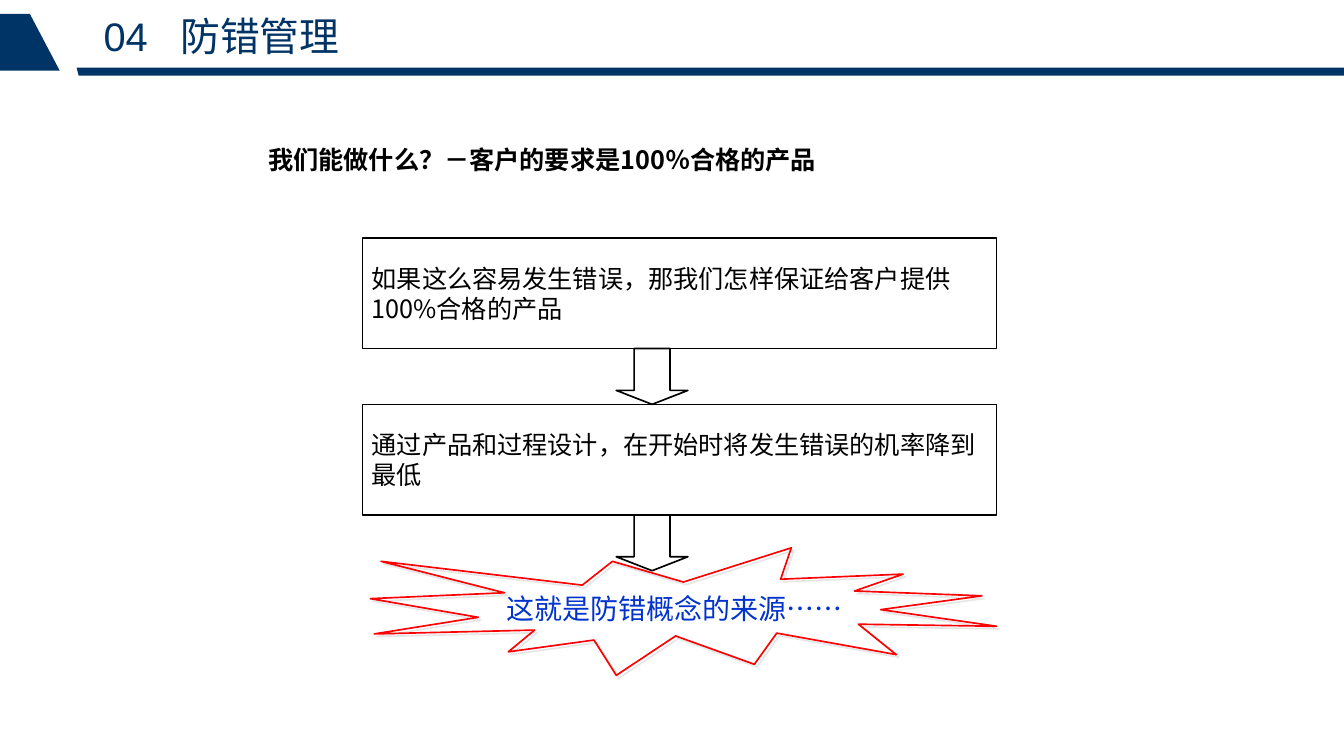
from dataclasses import dataclass

from lxml import etree
from pptx import Presentation
from pptx.dml.color import RGBColor
from pptx.enum.shapes import MSO_SHAPE
from pptx.enum.text import MSO_ANCHOR, PP_ALIGN
from pptx.oxml.ns import qn
from pptx.util import Pt

PX = 9525
RECT = MSO_SHAPE.RECTANGLE
DOWN_ARROW = MSO_SHAPE.DOWN_ARROW
BURST = MSO_SHAPE.EXPLOSION1
MIDDLE = MSO_ANCHOR.MIDDLE
TOP = MSO_ANCHOR.TOP
LEFT = PP_ALIGN.LEFT


@dataclass(frozen=True)
class Theme:
    navy: str = "003366"
    ink: str = "000000"
    red: str = "FF0000"
    blue: str = "0033CC"
    shadow: str = "E7E6E6"
    latin: str = "Arial"
    cjk: str = "Noto Sans CJK SC"
    title: float = 30
    body: float = 19
    burst: float = 21.1
    line: float = 1.25


THEME = Theme()


def emu(box):
    return [v * PX for v in box]


def write(sp, text, size, color, font=THEME.cjk, bold=False, anchor=TOP):
    tf = sp.text_frame
    tf.word_wrap = True
    tf.vertical_anchor = anchor
    tf.text = text
    p = tf.paragraphs[0]
    p.alignment = LEFT
    r = p.runs[0]
    r.font.size = Pt(size)
    r.font.bold = bold
    r.font.color.rgb = RGBColor.from_string(color)
    r.font.name = font
    ea = etree.SubElement(r.font._element, qn("a:ea"))
    ea.set("typeface", THEME.cjk)
    return tf


def add_text(slide, box, *args, **kwargs):
    return write(slide.shapes.add_textbox(*emu(box)), *args, **kwargs)


def add_outline(slide, kind, box, color):
    sp = slide.shapes.add_shape(kind, *emu(box))
    sp.shadow.inherit = False
    sp.fill.background()
    sp.line.color.rgb = RGBColor.from_string(color)
    sp.line.width = Pt(THEME.line)
    return sp


def add_polygon(slide, points):
    builder = slide.shapes.build_freeform(*points[0], scale=PX)
    builder.add_line_segments(points[1:], close=True)
    sp = builder.convert_to_shape()
    sp.shadow.inherit = False
    sp.fill.solid()
    sp.fill.fore_color.rgb = RGBColor.from_string(THEME.navy)
    sp.line.fill.background()


def add_offset_shadow(sp):
    effects = sp._element.spPr.find(qn("a:effectLst"))
    shadow = etree.SubElement(effects, qn("a:outerShdw"))
    shadow.set("dist", str(Pt(2.8)))
    shadow.set("dir", str(45 * 60000))
    shadow.set("algn", "ctr")
    shadow.set("rotWithShape", "0")
    etree.SubElement(shadow, qn("a:srgbClr")).set("val", THEME.shadow)


def add_header(slide, box, number, title):
    x, y, w, h = box
    rule_y = y + h - 8
    add_polygon(slide, [(x + 77, rule_y), (x + w, rule_y),
                        (x + w, y + h), (x + 79, y + h)])
    add_polygon(slide, [(x + 30, y + 14), (x + 60, y + 71),
                        (x, y + 71), (x, y + 14)])
    parts = ((104, 70, number, THEME.latin), (181, 600, title, THEME.cjk))
    for left, width, text, font in parts:
        tf = add_text(slide, (x + left, y + 12, width, 48), text,
                      THEME.title, THEME.navy, font)
        tf.margin_left = tf.margin_right = 0
        tf.margin_top = tf.margin_bottom = 0


def add_flow(slide, box, steps, conclusion):
    x, y, w, h = box
    step_h, arrow_w, arrow_h, burst_h = 111, 72, 56, 128
    pitch = step_h + arrow_h

    burst_box = (x + 8, y + h - burst_h, w - 8, burst_h)
    add_offset_shadow(add_outline(slide, BURST, burst_box, THEME.red))
    add_text(slide, (x + 135, y + h - 89, 398, 43), conclusion,
             THEME.burst, THEME.blue)

    for i, text in enumerate(steps):
        top = y + i * pitch
        sp = add_outline(slide, RECT, (x, top, w, step_h), THEME.ink)
        write(sp, text, THEME.body, THEME.ink, anchor=MIDDLE)
        arrow_box = (x + 255, top + step_h, arrow_w, arrow_h)
        arrow = add_outline(slide, DOWN_ARROW, arrow_box, THEME.ink)
        arrow.adjustments[0] = 0.5
        arrow.adjustments[1] = 0.25


def main():
    prs = Presentation()
    prs.slide_width, prs.slide_height = emu((1350, 759))
    slide = prs.slides.add_slide(prs.slide_layouts[6])
    add_header(slide, (0, 0, 1350, 76), "04", "防错管理")
    add_text(slide, (260, 140, 765, 40),
             "我们能做什么？－客户的要求是100％合格的产品",
             THEME.body, THEME.ink, bold=True)
    steps = (
        "如果这么容易发生错误，那我们怎样保证给客户提供100%合格的产品",
        "通过产品和过程设计，在开始时将发生错误的机率降到最低",
    )
    add_flow(slide, (364, 239, 637, 439), steps, "这就是防错概念的来源……")
    prs.save("out.pptx")


if __name__ == "__main__":
    main()
